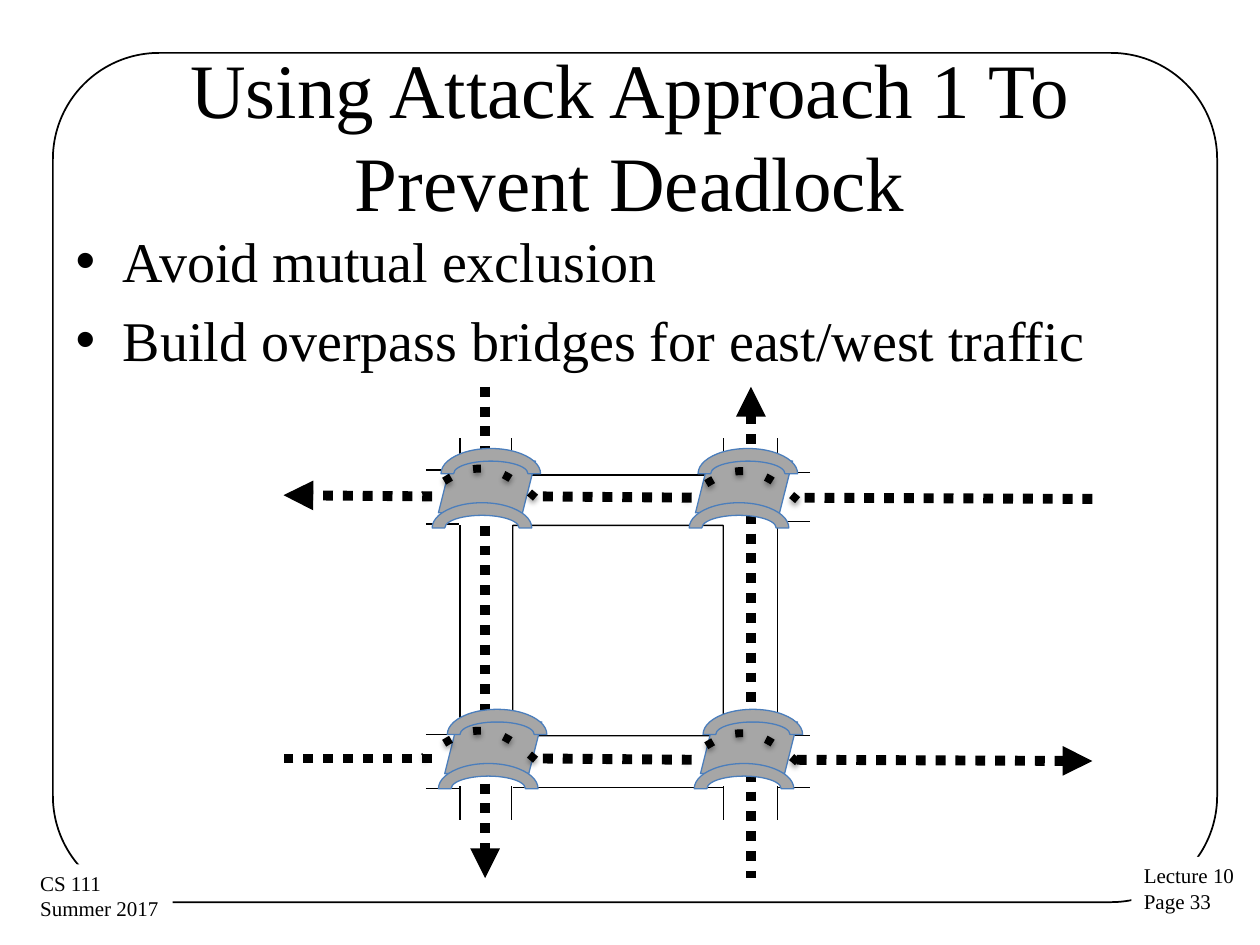
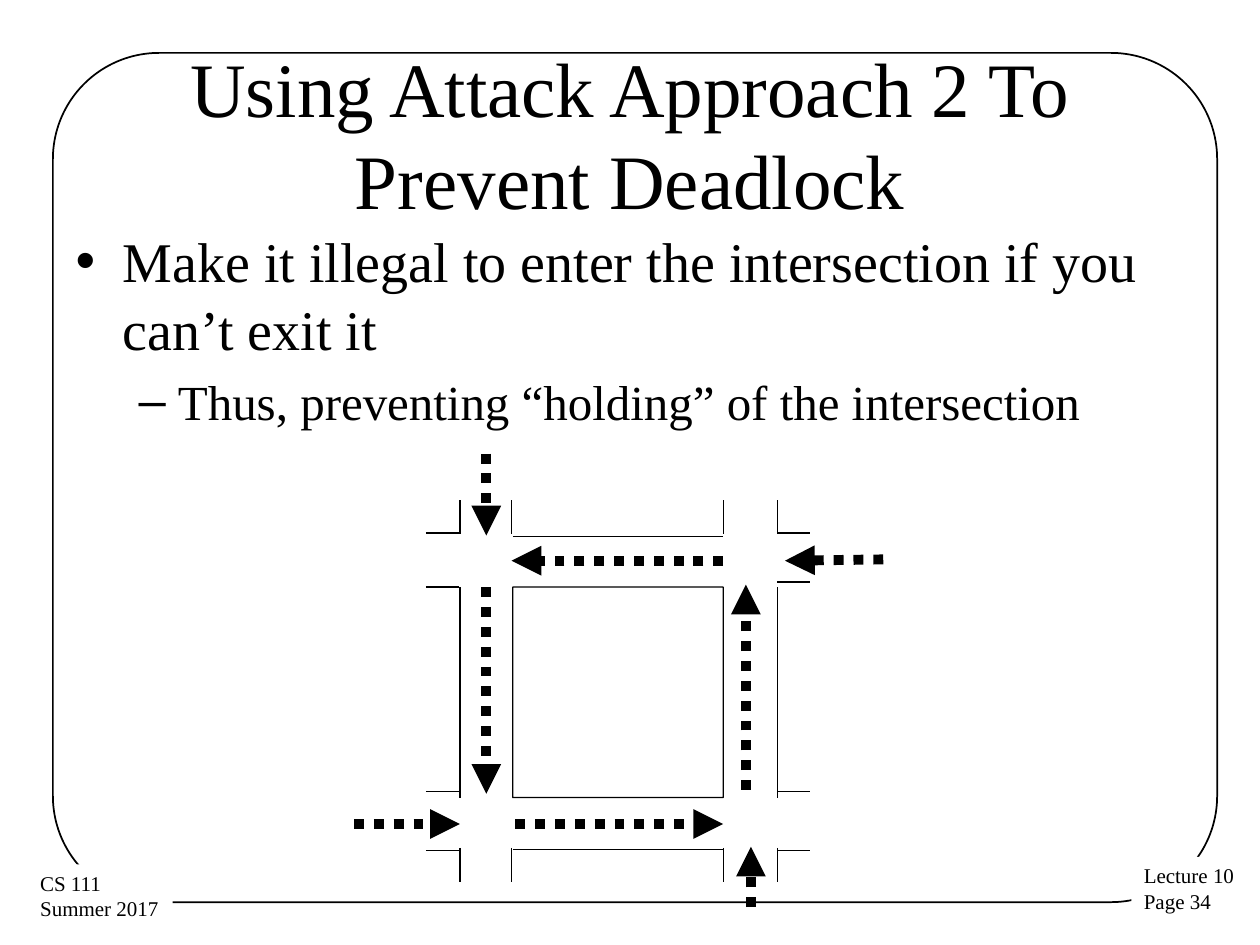
from lxml import etree
from pptx import Presentation
from pptx.dml.color import RGBColor
from pptx.enum.shapes import MSO_CONNECTOR, MSO_SHAPE
from pptx.enum.text import MSO_ANCHOR, MSO_AUTO_SIZE, PP_ALIGN
from pptx.oxml.ns import qn
from pptx.util import Inches, Pt

BLACK = RGBColor(0x00, 0x00, 0x00)
WHITE = RGBColor(0xFF, 0xFF, 0xFF)
BRIDGE_GRAY = RGBColor(0xA6, 0xA6, 0xA6)
BRIDGE_BLUE = RGBColor(0x4B, 0x7E, 0xBC)
FONT = "Times New Roman"

STRAIGHT = MSO_CONNECTOR.STRAIGHT
RECTANGLE = MSO_SHAPE.RECTANGLE
ROUNDED = MSO_SHAPE.ROUNDED_RECTANGLE
PARALLELOGRAM = MSO_SHAPE.PARALLELOGRAM
BLOCK_ARC = MSO_SHAPE.BLOCK_ARC
CENTER, LEFT = PP_ALIGN.CENTER, PP_ALIGN.LEFT
MIDDLE, TOP = MSO_ANCHOR.MIDDLE, MSO_ANCHOR.TOP
NO_AUTOFIT, GROW = MSO_AUTO_SIZE.NONE, MSO_AUTO_SIZE.SHAPE_TO_FIT_TEXT

ROAD_WIDTH, ROUTE_WIDTH, ARCH_WIDTH = 0.75, 5.67, 4.5
START, END = "a:headEnd", "a:tailEnd"

ROAD_XS = [3.65, 4.06, 5.74, 6.17]
BRIDGES = [(3.43, 3.56), (5.47, 3.56), (5.51, 5.63), (3.48, 5.63)]
BRIDGE_PARTS = [
    (PARALLELOGRAM, 0.05, 0.1, 0.77, 0.41),
    (BLOCK_ARC, 0.07, 0, 0.79, 0.4),
    (BLOCK_ARC, 0, 0.43, 0.79, 0.4),
]
ARCH_STARTS = [(6.33, 3.97), (4.25, 3.95), (6.33, 6.05), (4.25, 6.03)]
ARCH_CURVES = [
    [(0, 0), (-0.14, -0.12), (-0.28, -0.23), (-0.43, -0.23)],
    [(-0.43, -0.23), (-0.58, -0.24), (-0.73, -0.13), (-0.89, -0.02)],
]
CURVE_STEPS = 12

SLIDES = [
    {
        "title": "Using Attack Approach 1 To Prevent Deadlock",
        "title_top": 0.44,
        "bullets": [
            ("Avoid mutual exclusion", 0),
            ("Build overpass bridges for east/west traffic", 0),
        ],
        "page": "Page 33",
        "road_top": 3.48,
        "west_stubs": [3.73, 4.16, 5.83, 6.26],
        "east_stubs": [3.75, 4.14, 5.84, 6.25],
        "routes": [
            (5.96, 3.07, 5.96, 6.97, START),
            (3.43, 3.94, 2.25, 3.93, END),
            (3.85, 3.07, 3.85, 6.97, END),
        ],
        "bridges": BRIDGES,
        "upper_routes": [
            (8.67, 3.96, 6.31, 3.95, None),
            (5.49, 3.95, 4.29, 3.94, None),
            (3.43, 6.02, 2.25, 6.02, None),
            (8.67, 6.04, 6.31, 6.03, START),
            (5.49, 6.03, 4.29, 6.02, None),
        ],
        "arches": ARCH_STARTS,
    },
    {
        "title": "Using Attack Approach 2 To Prevent Deadlock",
        "title_top": 0.43,
        "bullets": [
            ("Make it illegal to enter the intersection if you can’t exit it", 0),
            ("Thus, preventing “holding” of the intersection", 1),
        ],
        "page": "Page 34",
        "road_top": 3.97,
        "west_stubs": [4.23, 4.66, 6.28, 6.75],
        "east_stubs": [4.23, 4.62, 6.28, 6.75],
        "routes": [
            (5.74, 4.45, 4.06, 4.45, END),
            (3.86, 4.66, 3.86, 6.3, END),
            (4.09, 6.54, 5.74, 6.54, END),
            (5.92, 6.27, 5.92, 4.64, END),
            (7.01, 4.44, 6.23, 4.45, END),
            (3.86, 3.6, 3.86, 4.25, END),
            (2.81, 6.54, 3.65, 6.54, END),
            (5.96, 7.2, 5.96, 6.72, END),
        ],
        "bridges": [],
        "upper_routes": [],
        "arches": [],
    },
]


def draw_shape(shapes, kind, box, fill=None, line=None, width=ROAD_WIDTH):
    shape = shapes.add_shape(kind, *[Inches(value) for value in box])
    shape.shadow.inherit = False
    if fill is None:
        shape.fill.background()
    else:
        shape.fill.solid()
        shape.fill.fore_color.rgb = fill
    if line is None:
        shape.line.fill.background()
    else:
        shape.line.color.rgb = line
        shape.line.width = Pt(width)
    return shape


def draw_line(slide, ends, width=ROAD_WIDTH, dash=None, arrow=None):
    connector = slide.shapes.add_connector(STRAIGHT, *[Inches(value) for value in ends])
    connector.line.color.rgb = BLACK
    connector.line.width = Pt(width)
    properties = connector._element.spPr
    outline = properties.find(qn("a:ln"))
    if dash:
        etree.SubElement(outline, qn("a:prstDash"), val=dash)
    if arrow:
        etree.SubElement(outline, qn(arrow), type="triangle")
    etree.SubElement(properties, qn("a:effectLst"))


presentation = Presentation()
presentation.slide_width = Inches(10)
presentation.slide_height = Inches(7.5)

for content in SLIDES:
    slide = presentation.slides.add_slide(presentation.slide_layouts[1])
    title, body = slide.placeholders

    frame = draw_shape(slide.shapes, ROUNDED, (0.42, 0.42, 9.24, 6.74), line=BLACK, width=1)
    frame.adjustments[0] = 0.125
    footers = [
        ((8.98, 6.8, 0.93, 0.51), ["Lecture 10", content["page"]]),
        ((0.22, 6.86, 1.15, 0.51), ["CS 111", "Summer 2017"]),
    ]
    texts = []
    for box, lines in footers:
        footer = draw_shape(slide.shapes, RECTANGLE, box, fill=WHITE)
        texts.append((footer, box, [(line, 0) for line in lines], [12], LEFT,
                      {"vertical_anchor": TOP, "word_wrap": False, "auto_size": GROW}))
    texts.append((title, (0.5, content["title_top"], 9, 1.25), [(content["title"], 0)], [44],
                  CENTER, {"vertical_anchor": MIDDLE, "word_wrap": True, "auto_size": NO_AUTOFIT}))
    texts.append((body, (0.5, 1.75, 9, 4.95), content["bullets"], [32, 28],
                  LEFT, {"vertical_anchor": TOP, "word_wrap": True, "auto_size": NO_AUTOFIT}))

    for shape, box, lines, sizes, alignment, frame_format in texts:
        for name, value in zip(("left", "top", "width", "height"), box):
            setattr(shape, name, Inches(value))
        text_frame = shape.text_frame
        for name, value in frame_format.items():
            setattr(text_frame, name, value)
        text_frame.text = "\n".join(line for line, level in lines)
        for paragraph, (line, level) in zip(text_frame.paragraphs, lines):
            paragraph.level = level
            paragraph.alignment = alignment
            font = paragraph.runs[0].font
            for name, value in {"name": FONT, "size": Pt(sizes[level])}.items():
                setattr(font, name, value)
            font.color.rgb = BLACK
    for placeholder in (title, body):
        slide.shapes._spTree.append(placeholder._element)

    top = content["road_top"]
    block = draw_shape(slide.shapes, ROUNDED, (4.07, top + 0.69, 1.67, 1.67), line=BLACK)
    block.adjustments[0] = 0.001
    roads = [(4.07, top + offset, 5.74, top + offset) for offset in (0.29, 2.77)]
    roads += [(x, top + 0.69, x, top + 2.36) for x in (3.65, 6.17)]
    roads += [(x, top + offset, x, top + offset + 0.27) for x in ROAD_XS for offset in (0, 2.76)]
    roads += [(3.38, y, 3.64, y) for y in content["west_stubs"]]
    roads += [(6.17, y, 6.43, y) for y in content["east_stubs"]]
    for road in roads:
        draw_line(slide, road)

    for *ends, arrow in content["routes"]:
        draw_line(slide, ends, ROUTE_WIDTH, "sysDot", arrow)

    for left, bridge_top in content["bridges"]:
        bridge = slide.shapes.add_group_shape()
        for kind, x, y, width, height in BRIDGE_PARTS:
            draw_shape(bridge.shapes, kind, (left + x, bridge_top + y, width, height),
                       BRIDGE_GRAY, BRIDGE_BLUE)

    for *ends, arrow in content["upper_routes"]:
        draw_line(slide, ends, ROUTE_WIDTH, "sysDot", arrow)

    for start_x, start_y in content["arches"]:
        points = []
        for curve in ARCH_CURVES:
            for step in range(1, CURVE_STEPS + 1):
                t = step / CURVE_STEPS
                weights = [(1 - t) ** 3, 3 * t * (1 - t) ** 2, 3 * t ** 2 * (1 - t), t ** 3]
                x = start_x + sum(weight * point[0] for weight, point in zip(weights, curve))
                y = start_y + sum(weight * point[1] for weight, point in zip(weights, curve))
                points.append((Inches(x), Inches(y)))
        builder = slide.shapes.build_freeform(Inches(start_x), Inches(start_y))
        builder.add_line_segments(points, close=False)
        arch = builder.convert_to_shape()
        arch.fill.background()
        arch.line.color.rgb = BLACK
        arch.line.width = Pt(ARCH_WIDTH)
        arch.shadow.inherit = False
        properties = arch._element.spPr
        etree.SubElement(properties.find(qn("a:ln")), qn("a:prstDash"), val="dot")
        shadow = etree.SubElement(properties.find(qn("a:effectLst")), qn("a:outerShdw"),
                                  blurRad=str(Pt(3.1)), dist=str(Pt(1.6)), dir="5400000",
                                  rotWithShape="0")
        color = etree.SubElement(shadow, qn("a:srgbClr"), val=str(BLACK))
        etree.SubElement(color, qn("a:alpha"), val="38000")

presentation.save("out.pptx")
